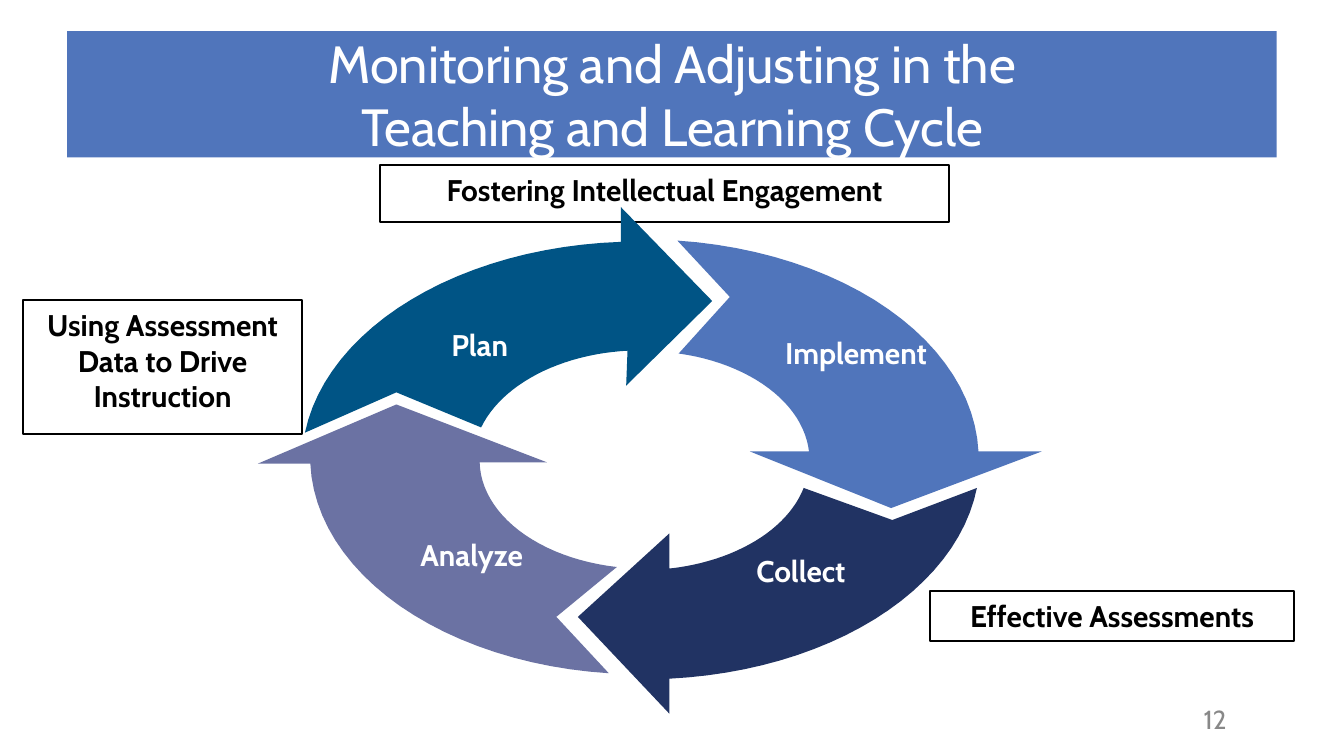
from math import atan2, cos, hypot, sin, tau

from pptx import Presentation
from pptx.dml.color import RGBColor
from pptx.enum.shapes import MSO_SHAPE
from pptx.enum.text import MSO_ANCHOR, MSO_AUTO_SIZE, PP_ALIGN
from pptx.util import Pt

# Ellipse that the four arrows follow, in points
CENTER = (344.9, 246.2)
RADII = (179.3, 117.4)
ARC_STEPS = 24

# Topic boxes: text, left, top, width, height
TOPICS = [
    ("Fostering Intellectual Engagement", 203.8, 88.6, 304.6, 30.2),
    ("Using Assessment Data to Drive Instruction", 12.2, 160.6, 149.8, 72),
    ("Effective Assessments", 498.2, 316.8, 195.1, 26.6),
]

# Arrow corners: tail inner, notch, tail outer, head outer,
# outer barb, tip, inner barb, head inner
ARROWS = [
    ("005485", [(257.8, 229), (212.4, 210.2), (163.4, 231.8), (332.6, 129.6),
                (332.6, 110.9), (381.6, 161.3), (335.5, 206.6), (336.2, 187.9)]),
    ("213363", [(430.6, 261.4), (478.1, 278.6), (523.4, 261.4), (358.6, 363.6),
                (358.6, 382.3), (309.6, 330.5), (358.6, 285.8), (358.6, 304.6)]),
    ("6B72A3", [(330.5, 303.8), (298.1, 330.5), (326.2, 360.7), (166.3, 248.4),
                (138.2, 248.4), (212.4, 216.7), (293, 247.7), (257, 247.7)]),
    ("5075BB", [(363.6, 189.4), (391, 159.1), (362.9, 128.9), (524.2, 241.9),
                (558, 241.9), (477.4, 272.2), (401.8, 241.9), (433.4, 241.9)]),
]

# Stage labels: text, left, top, width
STAGES = [
    ("Analyze", 218.2, 292.3, 69.1),
    ("Collect", 385.9, 301, 86.4),
    ("Implement", 411.1, 184.3, 95),
    ("Plan", 213.8, 180, 86.4),
]


def color(value):
    return RGBColor.from_string(value)


def write(shape, lines, size, hex_color, bold=False, margins=(7.2, 3.6),
          anchor=MSO_ANCHOR.MIDDLE, spacing=1.0):
    """Fill a shape with centred paragraphs."""
    frame = shape.text_frame
    horizontal, vertical = margins
    frame_format = {
        "word_wrap": True, "auto_size": MSO_AUTO_SIZE.NONE,
        "vertical_anchor": anchor,
        "margin_left": Pt(horizontal), "margin_right": Pt(horizontal),
        "margin_top": Pt(vertical), "margin_bottom": Pt(vertical),
    }
    for name, value in frame_format.items():
        setattr(frame, name, value)
    frame.text = "\n".join(lines)
    font_format = {"name": "Cabin", "size": Pt(size), "bold": bold}
    for paragraph in frame.paragraphs:
        paragraph.alignment = PP_ALIGN.CENTER
        paragraph.line_spacing = spacing
        for run in paragraph.runs:
            for name, value in font_format.items():
                setattr(run.font, name, value)
            run.font.color.rgb = color(hex_color)


def add_title(slide, lines):
    title = slide.shapes.title
    place = {"left": 36, "top": 16.6, "width": 648, "height": 67.7}
    for name, value in place.items():
        setattr(title, name, Pt(value))
    title.fill.solid()
    title.fill.fore_color.rgb = color("5075BB")
    write(title, lines, 28, "FFFFFF")


def add_topic(slide, text, *place):
    shape = slide.shapes.add_shape(MSO_SHAPE.RECTANGLE, *map(Pt, place))
    shape.shadow.inherit = False
    shape.fill.background()
    shape.line.color.rgb = color("000000")
    shape.line.width = Pt(1)
    write(shape, [text], 16, "000000", bold=True, anchor=MSO_ANCHOR.TOP)


def add_label(slide, text, place, size, hex_color, **text_format):
    box = slide.shapes.add_textbox(*map(Pt, place))
    write(box, [text], size, hex_color, **text_format)


def polar(point):
    """Angle and relative radius of a point on the stretched ellipse."""
    x, y = ((p - c) / r for p, c, r in zip(point, CENTER, RADII))
    return atan2(y, x), hypot(x, y)


def arc(start, end, direction):
    """Points from start to end; direction 1 is clockwise, -1 the reverse."""
    (angle, radius), (end_angle, end_radius) = polar(start), polar(end)
    sweep = direction * ((direction * (end_angle - angle)) % tau)
    points = []
    for step in range(ARC_STEPS + 1):
        share = step / ARC_STEPS
        turn = angle + sweep * share
        scale = radius + (end_radius - radius) * share
        points.append((CENTER[0] + RADII[0] * scale * cos(turn),
                       CENTER[1] + RADII[1] * scale * sin(turn)))
    return points


def add_arrow(slide, hex_color, corners):
    tail_inner, notch, tail_outer, head_outer, *head, head_inner = corners
    outline = [notch, *arc(tail_outer, head_outer, 1), *head,
               *arc(head_inner, tail_inner, -1)]
    points = [(Pt(x), Pt(y)) for x, y in outline]
    builder = slide.shapes.build_freeform(*points[0])
    builder.add_line_segments(points[1:], close=True)
    shape = builder.convert_to_shape()
    shape.shadow.inherit = False
    shape.fill.solid()
    shape.fill.fore_color.rgb = color(hex_color)
    shape.line.fill.background()


def main():
    presentation = Presentation()
    presentation.slide_width, presentation.slide_height = Pt(720), Pt(405)
    slide = presentation.slides.add_slide(presentation.slide_layouts[5])

    # Title bar and slide number
    add_title(slide, ["Monitoring and Adjusting in the", "Teaching and Learning Cycle"])
    add_label(slide, "12", (612, 374.4, 77.8, 21.6), 14, "888888")

    # Topics around the cycle
    for topic in TOPICS:
        add_topic(slide, *topic)

    # Cycle of arrows with stage names
    for arrow in ARROWS:
        add_arrow(slide, *arrow)
    for text, *place in STAGES:
        add_label(slide, text, (*place, 11.5), 16, "FFFFFF",
                  bold=True, margins=(0, 0), spacing=0.95)

    presentation.save("out.pptx")


if __name__ == "__main__":
    main()
